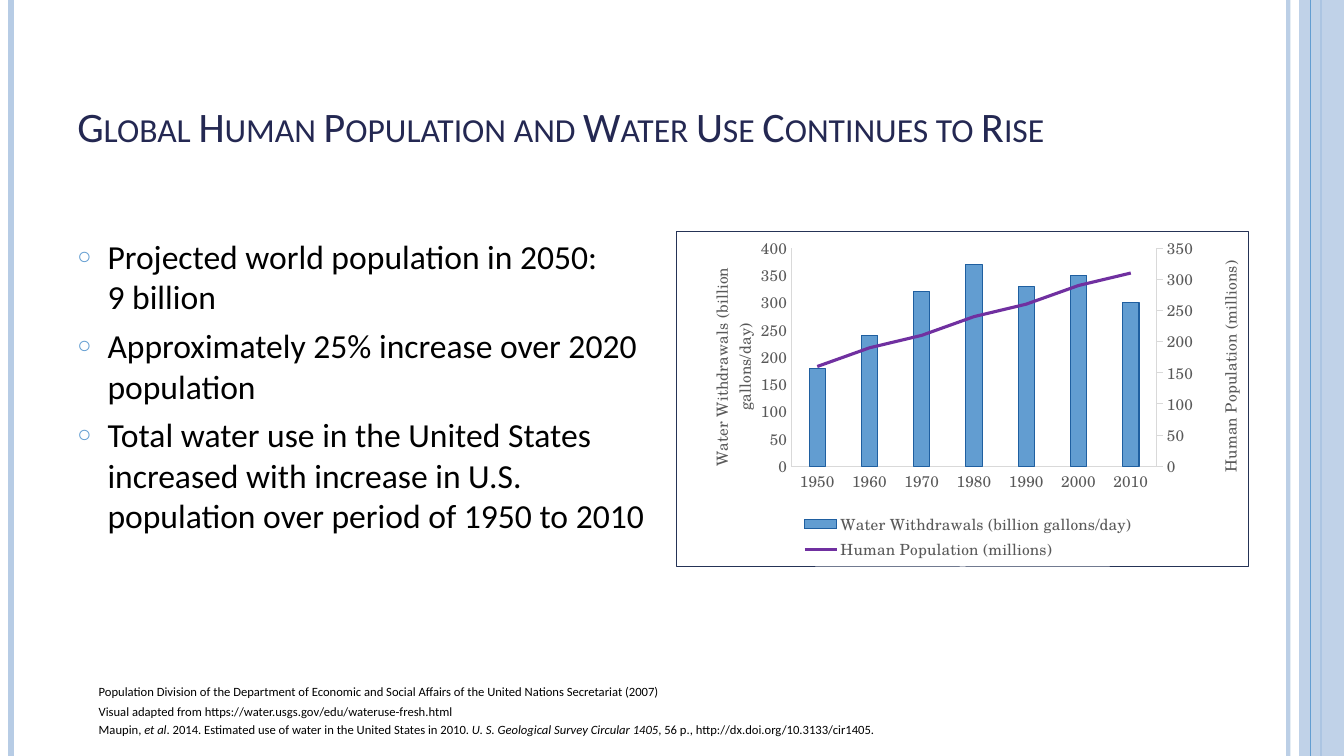
from copy import deepcopy

from lxml import etree
from pptx import Presentation
from pptx.chart.data import CategoryChartData
from pptx.dml.color import RGBColor
from pptx.enum.chart import XL_CHART_TYPE, XL_LEGEND_POSITION, XL_TICK_MARK
from pptx.enum.shapes import MSO_CONNECTOR, MSO_SHAPE
from pptx.enum.text import MSO_ANCHOR, MSO_AUTO_SIZE
from pptx.oxml import parse_xml
from pptx.oxml.ns import nsdecls, qn
from pptx.util import Pt

COLUMNS = XL_CHART_TYPE.COLUMN_CLUSTERED
LEGEND_BOTTOM = XL_LEGEND_POSITION.BOTTOM
NO_TICK = XL_TICK_MARK.NONE
STRAIGHT = MSO_CONNECTOR.STRAIGHT
RECTANGLE = MSO_SHAPE.RECTANGLE
NO_AUTOFIT = MSO_AUTO_SIZE.NONE
TOP, BOTTOM = MSO_ANCHOR.TOP, MSO_ANCHOR.BOTTOM

WIDTH, HEIGHT = 960, 540
TEXT_FONT, CHART_FONT = "Calibri", "TeX Gyre Schola"
PALE, BLUE, NAVY, PURPLE = "B7CCE5", "629DD1", "242852", "7030A0"
GREY, AXIS_GREY, BLACK = "595959", "D9D9D9", "000000"

TITLE = "Global Human Population and Water Use Continues to Rise"
POINTS = [
    "Projected world population in 2050:\v9 billion",
    "Approximately 25% increase over 2020 population",
    "Total water use in the United States increased with increase in U.S. "
    "population over period of 1950 to 2010",
]
# Each source: top, width, wraps, format, runs as (text, italic)
SOURCES = [
    (485.3, 419, False, {}, [
        ("Population Division of the Department of Economic and Social Affairs "
         "of the United Nations Secretariat (2007)", False)]),
    (499, 318, True, {}, [
        ("Visual adapted from https://water.usgs.gov/edu/wateruse-fresh.html", False)]),
    (511.2, 616, True, {"line_spacing": 1.07, "space_after": Pt(8)}, [
        ("Maupin, ", False), ("et al", True),
        (". 2014. Estimated use of water in the United States in 2010. ", False),
        ("U. S. Geological Survey Circular 1405", True),
        (", 56 p., http://dx.doi.org/10.3133/cir1405.", False)]),
]
YEARS = ["1950", "1960", "1970", "1980", "1990", "2000", "2010"]
WITHDRAWALS = ("Water Withdrawals (billion gallons/day)",
               [180, 240, 320, 370, 330, 350, 300])
POPULATION = ("Human Population (millions)", [160, 190, 210, 240, 260, 290, 310])
# Each stripe: x, colour, weight, opacity in percent
STRIPES_BELOW = [(920.2, PALE, 3, 93), (7.9, PALE, 4.5, 100), (943.9, BLUE, 1.5, 100)]
STRIPES_ABOVE = [(936, BLUE, 0.75, 100)]


def apply(target, **values):
    for key, value in values.items():
        setattr(target, key, value)


def paint(fill, colour, opacity=100):
    fill.solid()
    fill.fore_color.rgb = RGBColor.from_string(colour)
    if opacity < 100:
        tint = fill._xPr.find(".//" + qn("a:srgbClr"))
        etree.SubElement(tint, qn("a:alpha"), val=str(opacity * 1000))


def style_line(line, colour, weight, opacity=100):
    paint(line.fill, colour, opacity)
    line.width = Pt(weight)


def style_font(font, name, size, colour, **extra):
    apply(font, name=name, size=Pt(size), **extra)
    paint(font.fill, colour)


def place(shape, left, top, width, height):
    apply(shape, left=Pt(left), top=Pt(top), width=Pt(width), height=Pt(height))


def add_stripes(shapes, stripes):
    for x, colour, weight, opacity in stripes:
        stripe = shapes.add_connector(STRAIGHT, Pt(x), 0, Pt(x), Pt(HEIGHT))
        style_line(stripe.line, colour, weight, opacity)
        etree.SubElement(stripe._element.spPr, qn("a:effectLst"))


def add_frame(shapes):
    add_stripes(shapes, STRIPES_BELOW)
    band = shapes.add_shape(RECTANGLE, Pt(928), 0, Pt(WIDTH - 928), Pt(HEIGHT))
    band.shadow.inherit = False
    paint(band.fill, PALE, 87)
    band.line.fill.background()
    add_stripes(shapes, STRIPES_ABOVE)


def fill_title(title):
    place(title, 48, 21.6, 784, 90)
    apply(title.text_frame, text=TITLE, word_wrap=True, auto_size=NO_AUTOFIT,
          vertical_anchor=BOTTOM)
    paragraph = title.text_frame.paragraphs[0]
    paragraph.alignment = 1
    run = paragraph.runs[0]
    style_font(run.font, TEXT_FONT, 30, NAVY)
    run._r.get_or_add_rPr().set("cap", "small")


def fill_points(body):
    place(body, 48, 165, 431, 254)
    frame = body.text_frame
    apply(frame, text="\n".join(POINTS), word_wrap=True, auto_size=NO_AUTOFIT,
          vertical_anchor=TOP)
    for index, paragraph in enumerate(frame.paragraphs):
        properties = paragraph._p.get_or_add_pPr()
        properties.set("marL", str(Pt(21.6)))
        properties.set("indent", str(-Pt(21.6)))
        bullet_colour = etree.SubElement(properties, qn("a:buClr"))
        etree.SubElement(bullet_colour, qn("a:srgbClr"), val=BLUE)
        etree.SubElement(properties, qn("a:buSzPct"), val="70000")
        etree.SubElement(properties, qn("a:buChar"), char="○")
        paragraph.space_before = Pt(6 if index else 0)
        for run in paragraph.runs:
            style_font(run.font, TEXT_FONT, 24, BLACK)


def add_sources(shapes):
    for top, width, wraps, spacing, runs in SOURCES:
        source = shapes.add_textbox(Pt(63.4), Pt(top), Pt(width), Pt(18))
        source.text_frame.word_wrap = wraps
        paragraph = source.text_frame.paragraphs[0]
        apply(paragraph, **spacing)
        for text, italic in runs:
            run = paragraph.add_run()
            run.text = text
            style_font(run.font, TEXT_FONT, 9, BLACK, italic=italic)


def set_layout(parent, index, inner=False, **fractions):
    """Fix a chart part's position, in fractions of the chart."""
    for old in parent.findall(qn("c:layout")):
        parent.remove(old)
    layout = parse_xml(f"<c:layout {nsdecls('c')}><c:manualLayout/></c:layout>")
    manual = layout[0]
    if inner:
        etree.SubElement(manual, qn("c:layoutTarget"), val="inner")
    for key in "xy":
        etree.SubElement(manual, qn(f"c:{key}Mode"), val="edge")
    for key, value in fractions.items():
        etree.SubElement(manual, qn(f"c:{key}"), val=str(value))
    parent.insert(index, layout)


def add_right_axis(chart):
    """Turn the second series into a line on its own axis at the right."""
    plot_area = chart._chartSpace.chart.plotArea
    bars, categories, left = (plot_area.find(qn(f"c:{tag}"))
                              for tag in ("barChart", "catAx", "valAx"))
    series = bars.findall(qn("c:ser"))[1]
    inverted = series.find(qn("c:invertIfNegative"))
    if inverted is not None:
        series.remove(inverted)
    lines = parse_xml(f'<c:lineChart {nsdecls("c")}><c:grouping val="standard"/>'
                      '<c:varyColors val="0"/><c:marker val="1"/>'
                      '<c:axId val="5001"/><c:axId val="5002"/></c:lineChart>')
    lines.insert(2, series)
    bars.addnext(lines)
    series.find(qn("c:spPr")).addnext(
        parse_xml(f'<c:marker {nsdecls("c")}><c:symbol val="none"/></c:marker>'))
    etree.SubElement(series, qn("c:smooth"), val="0")

    right, hidden = deepcopy(left), deepcopy(categories)
    left.addnext(right)
    right.addnext(hidden)
    changes = [
        (right, {"axId": "5002", "crossAx": "5001", "axPos": "r", "crosses": "max",
                 "majorTickMark": "out", "scaling/c:max": "350"}),
        (hidden, {"axId": "5001", "crossAx": "5002", "delete": "1"}),
    ]
    for axis, values in changes:
        for tag, value in values.items():
            axis.find(qn("c:" + tag) if "/" not in tag else
                      "/".join(qn(part) for part in ("c:scaling", "c:max"))).set("val", value)
    title = right.find(qn("c:title"))
    title.find(".//" + qn("a:t")).text = POPULATION[0]
    set_layout(title, 1, x=0.94, y=0.08)


def add_water_chart(shapes):
    data = CategoryChartData()
    data.categories = YEARS
    for name, values in (WITHDRAWALS, POPULATION):
        data.add_series(name, values)
    chart = shapes.add_chart(COLUMNS, Pt(483.1), Pt(164.9), Pt(409), Pt(240.5), data).chart
    apply(chart, has_title=False, has_legend=True)
    style_font(chart.font, CHART_FONT, 11, BLACK)
    apply(chart.legend, position=LEGEND_BOTTOM, include_in_layout=False)
    style_font(chart.legend.font, CHART_FONT, 11, GREY)
    set_layout(chart.legend._element, 1, x=0.2, y=0.83, w=0.62, h=0.16)

    plot = chart.plots[0]
    apply(plot, gap_width=219, overlap=-27, vary_by_categories=False)
    withdrawals, population = plot.series
    paint(withdrawals.format.fill, BLUE)
    style_line(withdrawals.format.line, "1F5FA0", 0.75)
    style_line(population.format.line, PURPLE, 2.25)

    for axis in (chart.category_axis, chart.value_axis):
        apply(axis, has_major_gridlines=False, major_tick_mark=NO_TICK,
              minor_tick_mark=NO_TICK)
        style_font(axis.tick_labels.font, CHART_FONT, 11, GREY)
        style_line(axis.format.line, AXIS_GREY, 0.75)
    left = chart.value_axis
    apply(left, minimum_scale=0, maximum_scale=400, major_unit=50)
    frame = left.axis_title.text_frame
    frame.text = WITHDRAWALS[0]
    style_font(frame.paragraphs[0].runs[0].font, CHART_FONT, 11, GREY, bold=False)
    turned = frame._txBody.find(qn("a:bodyPr"))
    turned.set("rot", "-5400000")
    turned.set("vert", "horz")
    set_layout(left.axis_title._element, 1, x=0.05, y=0.1)

    add_right_axis(chart)
    set_layout(chart._chartSpace.chart.plotArea, 0, inner=True, x=0.2, y=0.05, w=0.64, h=0.65)
    chart._chartSpace.find(qn("c:txPr")).addprevious(parse_xml(
        f'<c:spPr {nsdecls("c", "a")}><a:noFill/><a:ln w="{Pt(0.75)}"><a:solidFill>'
        '<a:srgbClr val="253356"/></a:solidFill></a:ln></c:spPr>'))


def main():
    deck = Presentation()
    apply(deck, slide_width=Pt(WIDTH), slide_height=Pt(HEIGHT))
    slide = deck.slides.add_slide(deck.slide_layouts[1])
    add_frame(slide.shapes)
    fill_title(slide.shapes.title)
    fill_points(slide.placeholders[1])
    add_sources(slide.shapes)
    add_water_chart(slide.shapes)
    deck.save("out.pptx")


if __name__ == "__main__":
    main()
